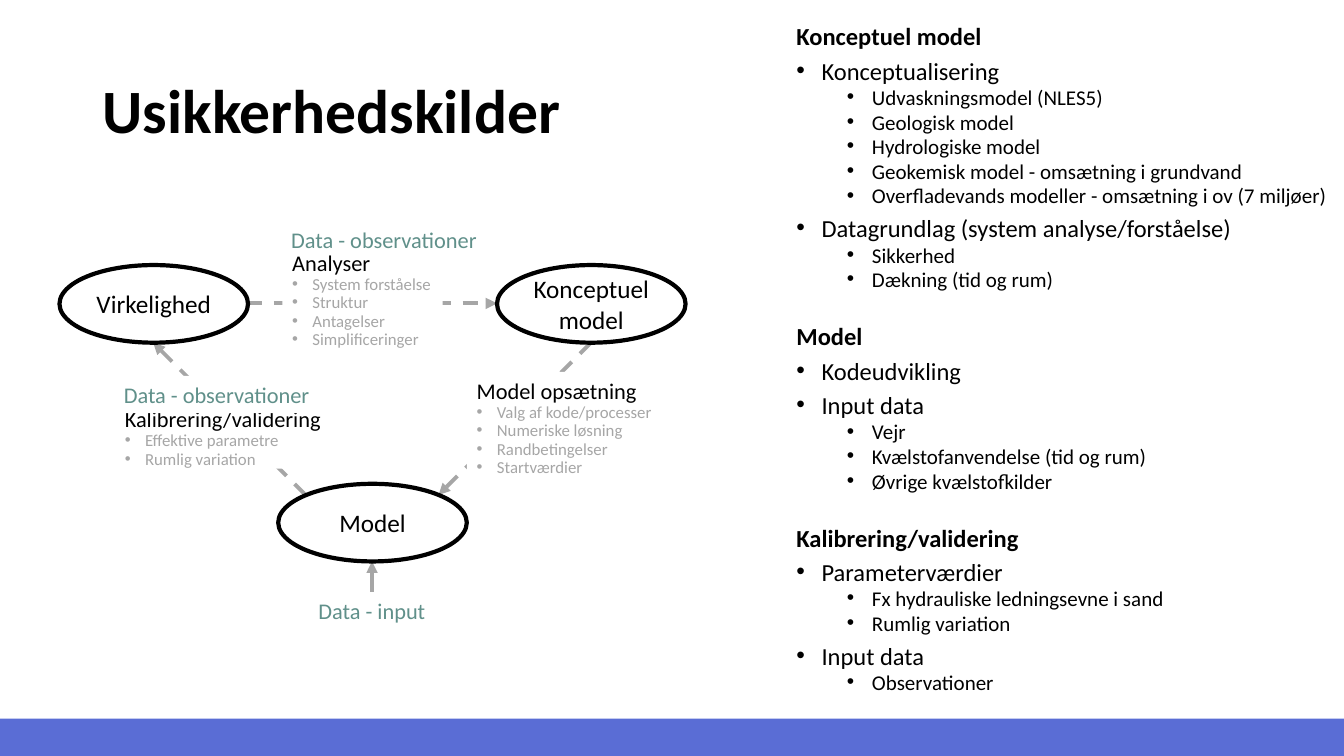
"""Build the slide on sources of uncertainty, with its model cycle and outline."""
from lxml import etree
from pptx import Presentation
from pptx import util as u
from pptx.dml.color import RGBColor
from pptx.enum import dml, shapes, text
from pptx.oxml.ns import qn

FONT = "Calibri"
BLACK, WHITE, GREY, GREEN, BLUE = "000000", "FFFFFF", "A6A6A6", "60908A", "5A6DD5"

TITLE = "Usikkerhedskilder"
OUTLINE = [
    ("Konceptuel model", [
        ("Konceptualisering", [
            "Udvaskningsmodel (NLES5)",
            "Geologisk model",
            "Hydrologiske model",
            "Geokemisk model - omsætning i grundvand",
            "Overfladevands modeller - omsætning i ov (7 miljøer)"]),
        ("Datagrundlag (system analyse/forståelse)", [
            "Sikkerhed", "Dækning (tid og rum)"])]),
    ("Model", [
        ("Kodeudvikling", []),
        ("Input data", [
            "Vejr", "Kvælstofanvendelse (tid og rum)", "Øvrige kvælstofkilder"])]),
    ("Kalibrering/validering", [
        ("Parameterværdier", [
            "Fx hydrauliske ledningsevne i sand", "Rumlig variation"]),
        ("Input data", ["Observationer"])]),
]
STAGES = [("Virkelighed", 0.59, 2.63), ("Konceptuel model", 4.93, 2.63), ("Model", 2.76, 4.8)]
STAGE_SIZE = (1.87, 0.77)
ARROWS = [
    ((5.86, 3.4), (4.35, 4.91), True),
    ((3.03, 4.91), (1.52, 3.4), True),
    ((2.45, 3.01), (4.93, 3.01), True),
    ((3.69, 5.87), (3.69, 5.57), False),
]
STEPS = [
    ("Analyser", (2.8, 2.42, 1.59, 1.1), 0.05,
     ["System forståelse", "Struktur", "Antagelser", "Simplificeringer"]),
    ("Model opsætning", (4.63, 3.69, 1.95, 1.1), 0.05,
     ["Valg af kode/processer", "Numeriske løsning", "Randbetingelser", "Startværdier"]),
    ("Kalibrering/validering", (1.14, 4.02, 2.17, 0.63), 0,
     ["Effektive parametre", "Rumlig variation"]),
]
DATA = [
    ("Data - observationer", (2.79, 2.19, 2.07, 0.37), None),
    ("Data - input", (3.06, 5.87, 1.27, 0.37), None),
    ("Data - observationer", (1.13, 3.73, 2.07, 0.37), WHITE),
]


def rgb(hex_code):
    return RGBColor.from_string(hex_code)


def inches(values):
    return [u.Inches(v) for v in values]


def add_panel(slide, kind, place, fill=None, line=None):
    panel = slide.shapes.add_shape(kind, *inches(place))
    panel.shadow.inherit = False
    if fill:
        panel.fill.solid()
        panel.fill.fore_color.rgb = rgb(fill)
    else:
        panel.fill.background()
    if line:
        panel.line.color.rgb = rgb(line)
        panel.line.width = u.Pt(3)
    else:
        panel.line.fill.background()
    return panel


def set_frame(frame, wrap, anchor=text.MSO_ANCHOR.TOP, sides=0.1, top=0.05, bottom=0.05):
    frame.word_wrap = wrap
    frame.vertical_anchor = anchor
    frame.margin_left = frame.margin_right = u.Inches(sides)
    frame.margin_top, frame.margin_bottom = inches((top, bottom))
    if not wrap:
        frame.auto_size = text.MSO_AUTO_SIZE.SHAPE_TO_FIT_TEXT
    return frame


def add_line(frame, words, size, color=BLACK, bold=False, indent=0, hang=0,
             spacing=None, before=0, align=text.PP_ALIGN.LEFT):
    first = not frame.paragraphs[0].runs
    para = frame.paragraphs[0] if first else frame.add_paragraph()
    if hang:
        props = para._p.get_or_add_pPr()
        props.set("marL", str(u.Inches(indent)))
        props.set("indent", str(-u.Inches(hang)))
        etree.SubElement(props, qn("a:buFont")).set("typeface", "Arial")
        etree.SubElement(props, qn("a:buChar")).set("char", "•")
    para.alignment = align
    if spacing:
        para.line_spacing = spacing
    if before and not first:
        para.space_before = u.Pt(before)
    run = para.add_run()
    run.text = words
    run.font.name, run.font.size, run.font.bold = FONT, u.Pt(size), bold
    run.font.color.rgb = rgb(color)


def add_arrow(slide, start, end, dashed):
    arrow = slide.shapes.add_connector(
        shapes.MSO_CONNECTOR.STRAIGHT, *inches(start + end))
    arrow.line.color.rgb = rgb(GREY)
    arrow.line.width = u.Pt(2.75)
    if dashed:
        arrow.line.dash_style = dml.MSO_LINE.DASH
    etree.SubElement(arrow.line._get_or_add_ln(), qn("a:tailEnd")).set("type", "triangle")
    etree.SubElement(arrow._element.spPr, qn("a:effectLst"))


def add_outline(slide):
    box = slide.shapes.add_textbox(*inches((7.8, 0.24, 5.75, 7.26)))
    frame = set_frame(box.text_frame, True)
    for heading, topics in OUTLINE:
        add_line(frame, heading, 17.5, bold=True, spacing=0.7, before=27)
        for topic, details in topics:
            add_line(frame, topic, 17.5, indent=0.25, hang=0.25, spacing=0.7, before=10)
            for detail in details:
                add_line(frame, detail, 15, indent=0.75, hang=0.25, spacing=0.7, before=5)


def add_cycle(slide):
    rect, oval = shapes.MSO_SHAPE.RECTANGLE, shapes.MSO_SHAPE.OVAL
    middle = text.MSO_ANCHOR.MIDDLE
    for start, end, dashed in ARROWS:
        add_arrow(slide, start, end, dashed)
    for name, left, top in STAGES:
        stage = add_panel(slide, oval, (left, top) + STAGE_SIZE, line=BLACK)
        frame = set_frame(stage.text_frame, True, middle, 0, 0, 0)
        add_line(frame, name, 18, align=text.PP_ALIGN.CENTER)
    for name, place, margin, details in STEPS:
        step = add_panel(slide, rect, place, WHITE)
        frame = set_frame(step.text_frame, False, top=margin, bottom=margin)
        add_line(frame, name, 16)
        for detail in details:
            add_line(frame, detail, 12, GREY, indent=0.2, hang=0.2, spacing=u.Pt(13))
    for name, place, fill in DATA:
        label = add_panel(slide, rect, place, fill)
        add_line(set_frame(label.text_frame, False), name, 16, GREEN)


def main():
    deck = Presentation()
    deck.slide_width, deck.slide_height = inches((13.33, 7.5))
    slide = deck.slides.add_slide(deck.slide_layouts[6])
    add_panel(slide, shapes.MSO_SHAPE.RECTANGLE, (0, 7.13, 13.33, 0.37), BLUE)
    title = slide.shapes.add_textbox(*inches((0.92, 0.4, 11.5, 1.45)))
    frame = set_frame(title.text_frame, True, text.MSO_ANCHOR.MIDDLE)
    add_line(frame, TITLE, 44, bold=True, spacing=0.9)
    add_outline(slide)
    add_cycle(slide)
    deck.save("out.pptx")


if __name__ == "__main__":
    main()
